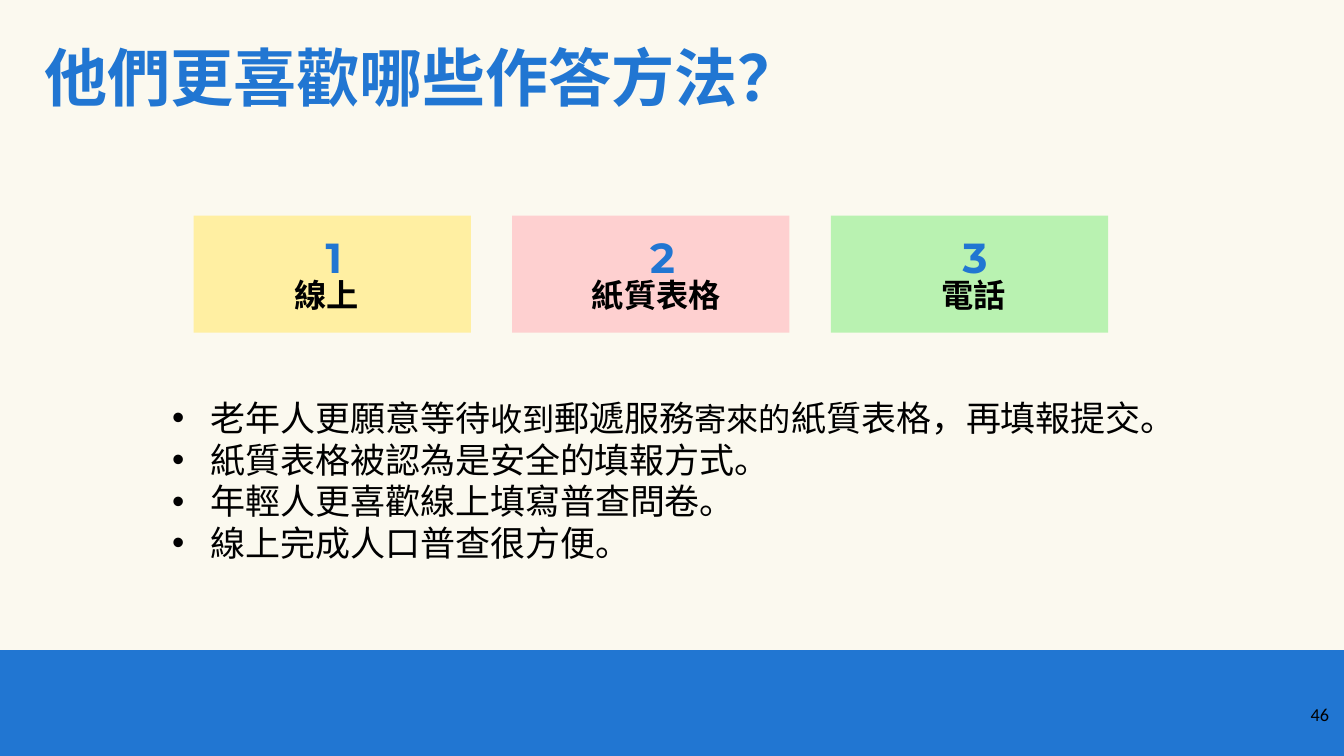
from pptx import Presentation
from pptx.dml.color import RGBColor
from pptx.enum.shapes import MSO_SHAPE
from pptx.enum.text import PP_ALIGN
from pptx.util import Inches, Pt
from lxml.etree import SubElement
from pptx.oxml.ns import qn

CREAM = RGBColor(0xFB, 0xF9, 0xEF)
BLUE = RGBColor(0x21, 0x76, 0xD2)
BLACK = RGBColor(0, 0, 0)
YELLOW = RGBColor(0xFF, 0xEF, 0xA2)
PINK = RGBColor(0xFE, 0xD0, 0xD0)
GREEN = RGBColor(0xB9, 0xF2, 0xB1)

TITLE = "他們更喜歡哪些作答方法？"
PAGE = "46"
CARDS = [
    ("1", "線上", YELLOW, 3.13, 1.46),
    ("2", "紙質表格", PINK, 6.35, 4.73),
    ("3", "電話", GREEN, 9.45, 7.88),
]
SANS = ("Open Sans", 25)
ARIAL = ("Arial", 25)
SMALL = ("Arial", 23)
POINTS = [
    [("老年人更願意等待", SANS), ("收到", SMALL), ("郵遞服務", SANS),
     ("寄來的", SMALL), ("紙質表格，", SANS), ("再填報", ARIAL), ("提交。", SANS)],
    [("紙質表格被認為是安全的", SANS), ("填報", ARIAL), ("方式。", SANS)],
    [("年輕人更喜歡線上填寫普查問卷。", SANS)],
    [("線上完成人口普查很方便。", SANS)],
]
CARD_LEFT, CARD_TOP, CARD_W, CARD_H, STEP = 1.92, 2.14, 2.75, 1.16, 3.16

deck = Presentation()
deck.slide_width, deck.slide_height = Inches(13.33), Inches(7.5)
slide = deck.slides.add_slide(deck.slide_layouts[6])
slide.background.fill.solid()
slide.background.fill.fore_color.rgb = CREAM


def add_rect(left, top, width, height, color):
    rect = slide.shapes.add_shape(
        MSO_SHAPE.RECTANGLE, Inches(left), Inches(top), Inches(width), Inches(height))
    rect.shadow.inherit = False
    rect.fill.solid()
    rect.fill.fore_color.rgb = color
    rect.line.fill.background()


def add_frame(left, top, width, height):
    box = slide.shapes.add_textbox(
        Inches(left), Inches(top), Inches(width), Inches(height))
    box.text_frame.word_wrap = True
    return box.text_frame


def style(font, name, size, color=BLACK, bold=False):
    font.name, font.size, font.bold = name, Pt(size), bold
    font.color.rgb = color


def add_text(text, place, name, size, color=BLACK, bold=True, align=PP_ALIGN.LEFT):
    frame = add_frame(*place)
    frame.text = text
    para = frame.paragraphs[0]
    para.alignment = align
    style(para.runs[0].font, name, size, color, bold)


def add_bullet(para):
    props = para._p.get_or_add_pPr()
    props.set("marL", str(Inches(0.38)))
    props.set("indent", str(Inches(-0.38)))
    tint = SubElement(props, qn("a:buClr"))
    SubElement(tint, qn("a:srgbClr")).set("val", str(BLACK))
    SubElement(props, qn("a:buFont")).set("typeface", "Arial")
    SubElement(props, qn("a:buChar")).set("char", "•")


add_rect(0, 6.45, 13.33, 1.05, BLUE)
add_text(TITLE, (0.34, 0.33, 12.53, 0.9), "Montserrat", 45, BLUE)

for i, (num, label, color, num_left, label_left) in enumerate(CARDS):
    add_rect(CARD_LEFT + i * STEP, CARD_TOP, CARD_W, CARD_H, color)
    add_text(label, (label_left, 2.68, 3.56, 0.64), "Open Sans", 23,
             align=PP_ALIGN.CENTER)
    add_text(num, (num_left, 2.25, 0.52, 0.61), "Montserrat", 30, BLUE)

frame = add_frame(1.61, 3.88, 11.63, 1.8)
for i, parts in enumerate(POINTS):
    para = frame.add_paragraph() if i else frame.paragraphs[0]
    add_bullet(para)
    for text, (name, size) in parts:
        run = para.add_run()
        run.text = text
        style(run.font, name, size)

add_text(PAGE, (12.48, 6.93, 0.8, 0.57), "Calibri", 13, bold=False,
         align=PP_ALIGN.RIGHT)

deck.save("out.pptx")
